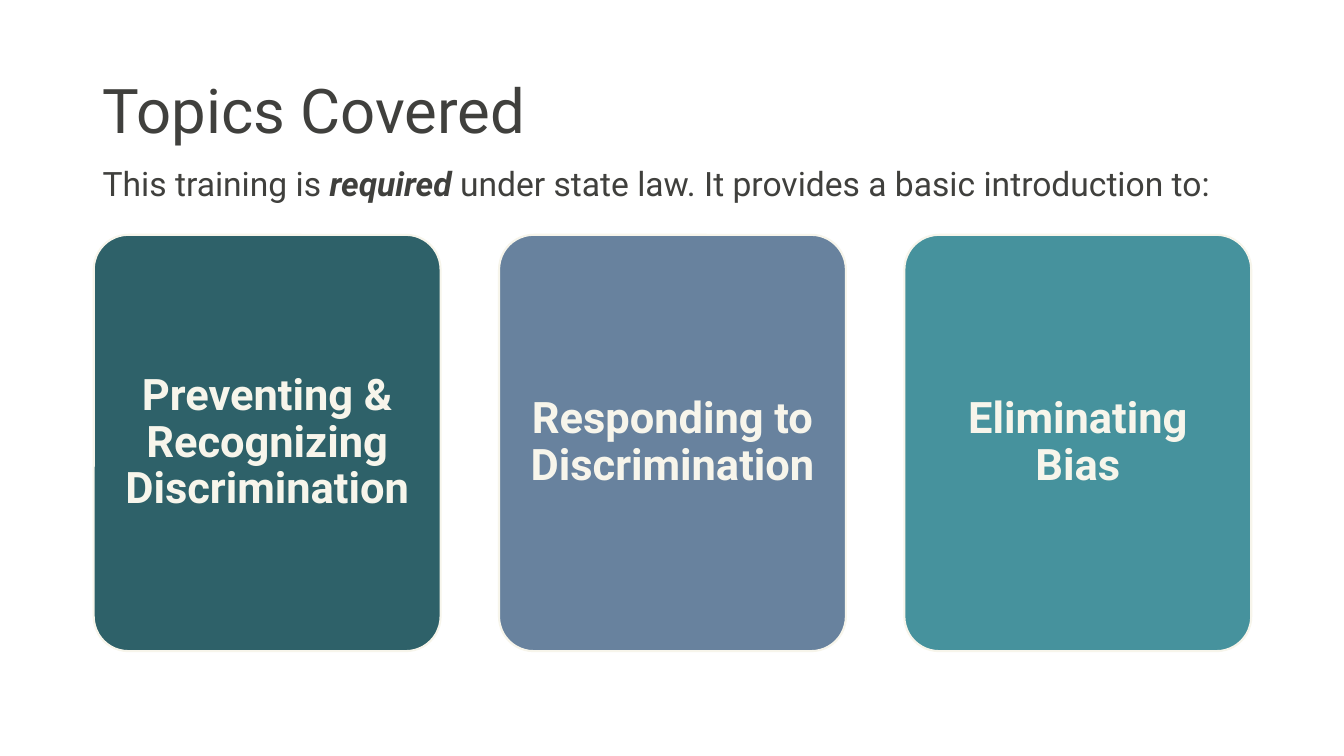
from pptx import Presentation
from pptx.dml.color import RGBColor
from pptx.enum.shapes import MSO_SHAPE
from pptx.enum.text import MSO_ANCHOR, PP_ALIGN
from pptx.util import Inches, Pt

INK = RGBColor(0x40, 0x40, 0x3D)
CREAM = RGBColor(0xF7, 0xF5, 0xEB)
PINE = RGBColor(0x2E, 0x61, 0x69)
SLATE = RGBColor(0x68, 0x82, 0x9E)
TEAL = RGBColor(0x46, 0x92, 0x9D)


class Deck:
    """Hold the text style and the current slide."""

    font_name = "Roboto"

    def __init__(self, prs):
        self.slide = prs.slides.add_slide(prs.slide_layouts[6])

    def fill_text(self, tf, runs, size, color, **paragraph_format):
        tf.word_wrap = True
        p = tf.paragraphs[0]
        for name, value in paragraph_format.items():
            setattr(p, name, value)
        for text, extra in runs:
            r = p.add_run()
            r.text = text
            r.font.color.rgb = color
            style = {"name": self.font_name, "size": Pt(size), **extra}
            for name, value in style.items():
                setattr(r.font, name, value)

    def text(self, box, runs, size, anchor=MSO_ANCHOR.TOP, **paragraph_format):
        tf = self.slide.shapes.add_textbox(*map(Inches, box)).text_frame
        tf.vertical_anchor = anchor
        self.fill_text(tf, runs, size, INK, **paragraph_format)

    def card(self, box, label, fill):
        sp = self.slide.shapes.add_shape(MSO_SHAPE.ROUNDED_RECTANGLE, *map(Inches, box))
        sp.adjustments[0] = 0.1
        sp.shadow.inherit = False
        sp.fill.solid()
        sp.fill.fore_color.rgb = fill
        sp.line.color.rgb = CREAM
        sp.line.width = Pt(1.5)
        tf = sp.text_frame
        tf.vertical_anchor = MSO_ANCHOR.MIDDLE
        for side in ("left", "top", "right", "bottom"):
            setattr(tf, f"margin_{side}", Inches(0.13))
        self.fill_text(tf, [(label, {"bold": True})], 31, CREAM,
                       alignment=PP_ALIGN.CENTER, line_spacing=0.9)


def main():
    prs = Presentation()
    prs.slide_width, prs.slide_height = Inches(13.33), Inches(7.5)
    deck = Deck(prs)
    deck.text((0.92, 0.4, 11.5, 1.45), [("Topics Covered", {})], 44,
              MSO_ANCHOR.MIDDLE, line_spacing=0.9)
    topics = [
        ("Preventing & Recognizing Discrimination", PINE),
        ("Responding to Discrimination", SLATE),
        ("Eliminating Bias", TEAL),
    ]
    for i, (label, fill) in enumerate(topics):
        deck.card((0.93 + i * 4.02, 2.33, 3.44, 4.13), label, fill)
    deck.text((0.92, 1.57, 11.4, 0.5), [
        ("This training is ", {}),
        ("required", {"bold": True, "italic": True}),
        (" under state law. It provides a basic introduction to:", {}),
    ], 24)
    prs.save("out.pptx")


if __name__ == "__main__":
    main()
